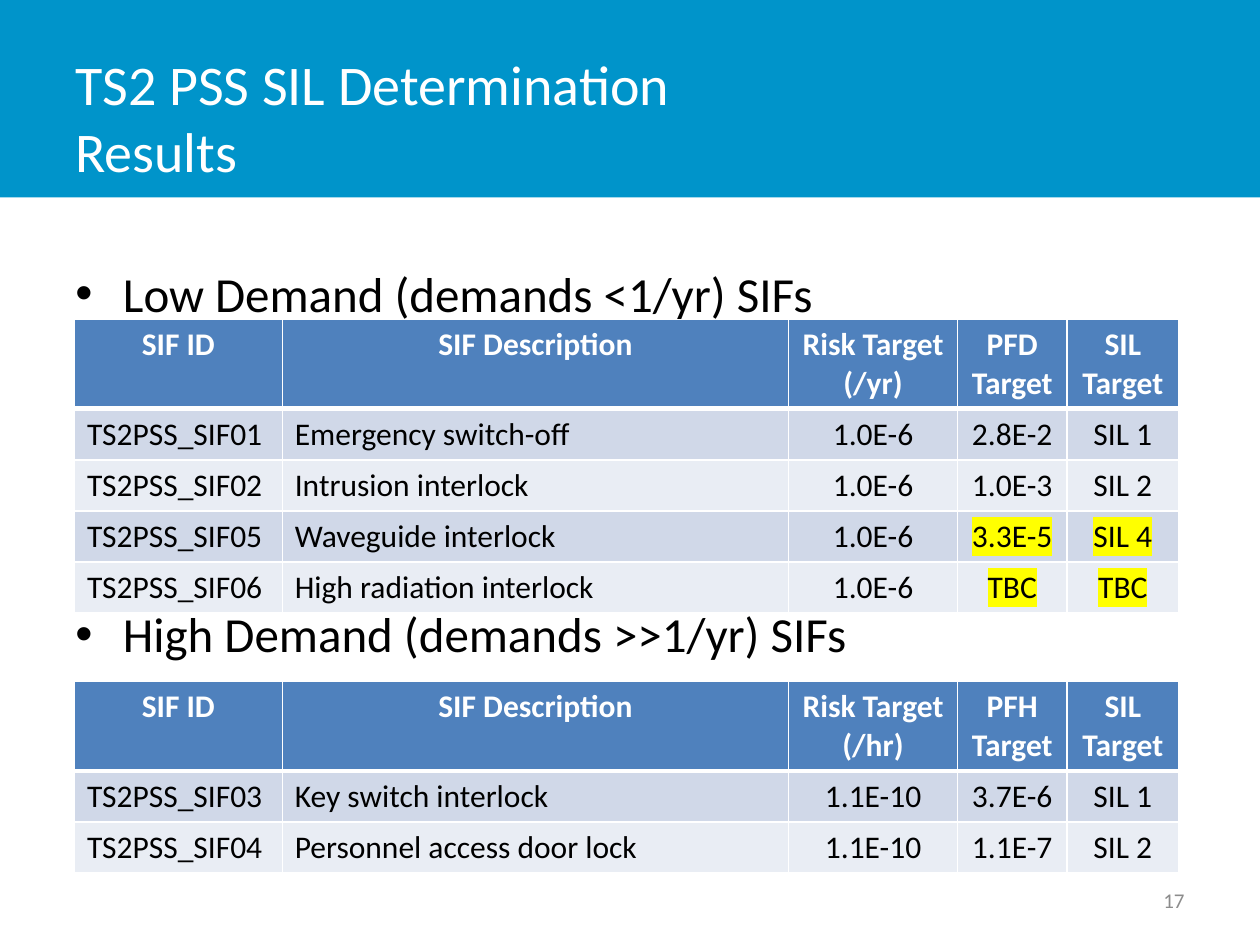
from dataclasses import dataclass

from lxml.etree import SubElement
from pptx import Presentation
from pptx.dml.color import RGBColor
from pptx.enum.shapes import MSO_SHAPE
from pptx.enum.text import MSO_ANCHOR, PP_ALIGN
from pptx.oxml.ns import qn
from pptx.util import Cm, Pt

WHITE = RGBColor(0xFF, 0xFF, 0xFF)
BLACK = RGBColor(0, 0, 0)
GREY = RGBColor(0x8C, 0x8C, 0x8C)
CYAN = RGBColor(0x00, 0x94, 0xCA)
HEAD = RGBColor(0x4F, 0x81, 0xBD)
BANDS = RGBColor(0xD0, 0xD8, 0xE8), RGBColor(0xE9, 0xED, 0xF4)
YELLOW = RGBColor(0xFF, 0xFF, 0x00)

FONT = "Calibri"
WIDTHS = 4.19, 10.21, 3.4, 2.21, 2.25
HEAD_ROW, BODY_ROW = 1.8, 1.03
MARKED = {"3.3E-5", "SIL 4", "TBC"}


@dataclass
class Grid:
    top: float
    unit: str
    measure: str
    rows: list[tuple[str, ...]]


GRIDS = [
    Grid(6.44, "/yr", "PFD", [
        ("TS2PSS_SIF01", "Emergency switch-off", "1.0E-6", "2.8E-2", "SIL 1"),
        ("TS2PSS_SIF02", "Intrusion interlock", "1.0E-6", "1.0E-3", "SIL 2"),
        ("TS2PSS_SIF05", "Waveguide interlock", "1.0E-6", "3.3E-5", "SIL 4"),
        ("TS2PSS_SIF06", "High radiation interlock", "1.0E-6", "TBC", "TBC"),
    ]),
    Grid(13.74, "/hr", "PFH", [
        ("TS2PSS_SIF03", "Key switch interlock", "1.1E-10", "3.7E-6", "SIL 1"),
        ("TS2PSS_SIF04", "Personnel access door lock", "1.1E-10", "1.1E-7", "SIL 2"),
    ]),
]


def style(frame, size: float, color: RGBColor, bold: bool = False,
          align: PP_ALIGN = PP_ALIGN.LEFT) -> None:
    for para in frame.paragraphs:
        para.alignment = align
        for run in para.runs:
            font = run.font
            font.name, font.size, font.bold = FONT, Pt(size), bold
            font.color.rgb = color


def add_text(slide, text: str, left: float, top: float, width: float, height: float,
             anchor: MSO_ANCHOR = MSO_ANCHOR.MIDDLE):
    box = slide.shapes.add_textbox(Cm(left), Cm(top), Cm(width), Cm(height))
    frame = box.text_frame
    frame.word_wrap = True
    frame.vertical_anchor = anchor
    frame.text = text
    return frame


def add_bullet(para) -> None:
    props = para._p.get_or_add_pPr()
    props.set("marL", str(Cm(0.96)))
    props.set("indent", str(-Cm(0.96)))
    SubElement(props, qn("a:buFont"), typeface="Arial")
    SubElement(props, qn("a:buChar"), char="•")


def mark(run) -> None:
    """Highlight a run; the schema wants this right after its fill."""
    props = run._r.get_or_add_rPr()
    light = SubElement(props, qn("a:highlight"))
    SubElement(light, qn("a:srgbClr"), val=str(YELLOW))
    props.find(qn("a:solidFill")).addnext(light)


def add_edges(cell, row: int) -> None:
    """White cell borders, thicker between the header and the body."""
    thick = {"T": row == 1, "B": row == 0}
    props = cell._tc.get_or_add_tcPr()
    for spot, side in enumerate("LRTB"):
        width = Pt(3 if thick.get(side) else 1)
        line = SubElement(props, qn(f"a:ln{side}"), w=str(width))
        fill = SubElement(line, qn("a:solidFill"))
        SubElement(fill, qn("a:srgbClr"), val=str(WHITE))
        props.insert(spot, line)


def add_grid(slide, grid: Grid) -> None:
    head = ("SIF ID", "SIF Description", f"Risk Target ({grid.unit})",
            f"{grid.measure} Target", "SIL Target")
    lines = [head, *grid.rows]
    height = HEAD_ROW + BODY_ROW * len(grid.rows)
    table = slide.shapes.add_table(len(lines), len(head), Cm(1.5), Cm(grid.top),
                                   Cm(sum(WIDTHS)), Cm(height)).table
    for col, width in zip(table.columns, WIDTHS):
        col.width = Cm(width)
    for r, line in enumerate(lines):
        table.rows[r].height = Cm(BODY_ROW if r else HEAD_ROW)
        for c, text in enumerate(line):
            cell = table.cell(r, c)
            cell.fill.solid()
            cell.fill.fore_color.rgb = BANDS[(r - 1) % 2] if r else HEAD
            add_edges(cell, r)
            frame = cell.text_frame
            frame.text = text
            align = PP_ALIGN.LEFT if r and c < 2 else PP_ALIGN.CENTER
            style(frame, 18, BLACK if r else WHITE, r == 0, align)
            if text in MARKED:
                mark(frame.paragraphs[0].runs[0])


def main() -> None:
    deck = Presentation()
    deck.slide_width, deck.slide_height = Cm(25.4), Cm(19.05)
    slide = deck.slides.add_slide(deck.slide_layouts[6])

    band = slide.shapes.add_shape(MSO_SHAPE.RECTANGLE, 0, 0, deck.slide_width, Cm(3.98))
    band.shadow.inherit = False
    band.fill.solid()
    band.fill.fore_color.rgb = CYAN
    band.line.fill.background()

    title = add_text(slide, "TS2 PSS SIL Determination\vResults", 1.27, 0.76, 19.84, 3.18)
    style(title, 32, WHITE)
    number = add_text(slide, "17", 18.2, 17.65, 5.93, 1.01)
    style(number, 12, GREY, align=PP_ALIGN.RIGHT)

    body = add_text(slide, "Low Demand (demands <1/yr) SIFs\nHigh Demand (demands >>1/yr) SIFs",
                    1.27, 5.18, 22.86, 12.57, MSO_ANCHOR.TOP)
    for para in body.paragraphs:
        add_bullet(para)
    body.paragraphs[1].space_before = Pt(161)
    style(body, 28, BLACK)

    for grid in GRIDS:
        add_grid(slide, grid)
    deck.save("out.pptx")


if __name__ == "__main__":
    main()
